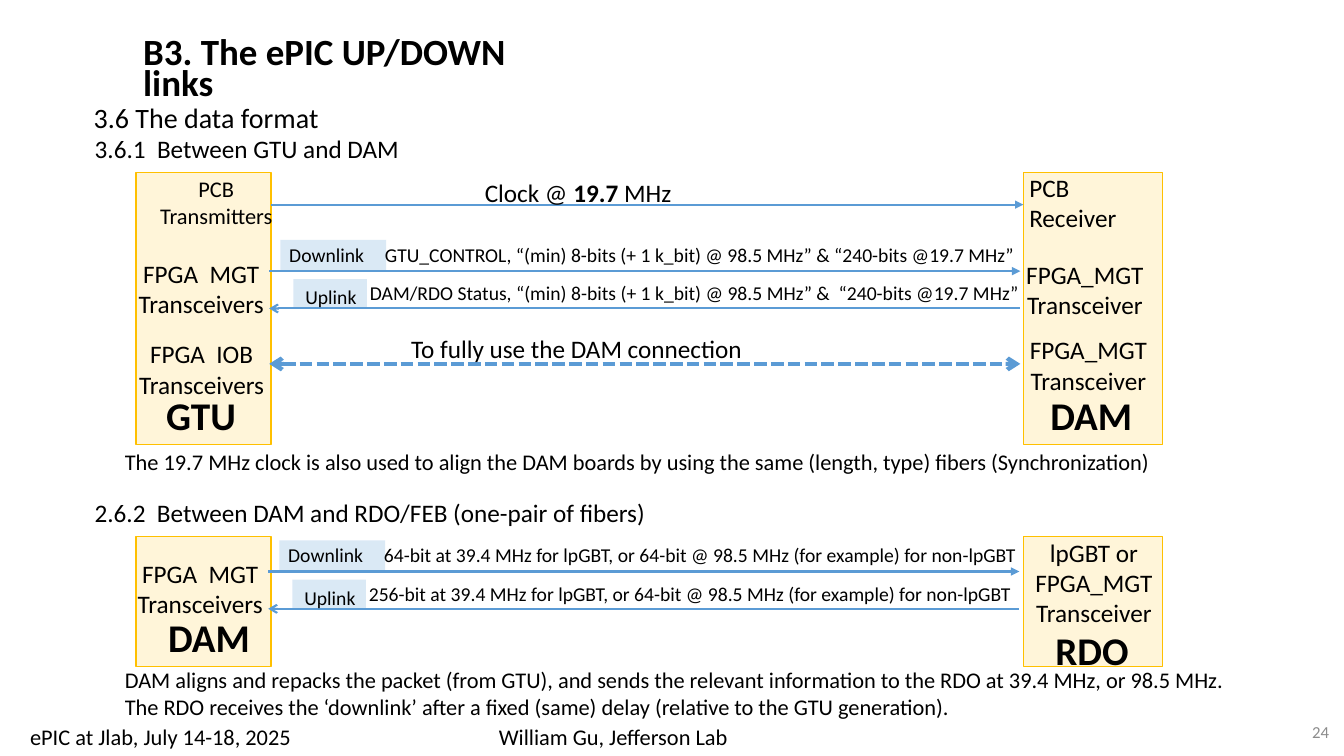
"""Build the slide on the ePIC up and down links."""
from pptx import Presentation
from pptx.dml.color import RGBColor
from pptx.enum.dml import MSO_LINE
from pptx.enum.shapes import MSO_CONNECTOR, MSO_SHAPE
from pptx.enum.text import MSO_ANCHOR, MSO_AUTO_SIZE, PP_ALIGN
from pptx.oxml.ns import qn
from pptx.util import Inches, Pt
from lxml import etree

LEFT, MID, RIGHT = PP_ALIGN.LEFT, PP_ALIGN.CENTER, PP_ALIGN.RIGHT
TOP, CENTER = MSO_ANCHOR.TOP, MSO_ANCHOR.MIDDLE
GROW, FIXED = MSO_AUTO_SIZE.SHAPE_TO_FIT_TEXT, MSO_AUTO_SIZE.NONE
RECT, LINE = MSO_SHAPE.RECTANGLE, MSO_CONNECTOR.STRAIGHT
DOTS = MSO_LINE.SQUARE_DOT
HEX = {"ink": "000000", "blue": "5B9BD5", "gold": "FFC000", "gray": "8C8C8C"}
FONT = "Calibri"
COLS, ROWS = 133.3, 75
CELL = Inches(0.1)
NEAR, FAR = 13.5, 101.5
NEAR_W, FAR_W = 13.4, 13.8
SPAN = 74.5


def grid(*cells):
    """Turn grid cells into slide lengths."""
    return [round(n * CELL) for n in cells]


def tint(name):
    """Return a named colour."""
    return RGBColor.from_string(HEX[name])


def fill_text(frame, runs, size, align=LEFT, color="ink", after=None):
    """Write (text, bold) runs into the first paragraph of a frame."""
    par = frame.paragraphs[0]
    par.alignment = align
    if after:
        par.space_after = Pt(after)
    for words, bold in runs:
        run = par.add_run()
        run.text = words
        font = run.font
        font.name, font.size, font.bold = FONT, Pt(size), bold
        font.color.rgb = tint(color)
    return par


def label(slide, cells, words, size, align=LEFT, wrap=False, bold=False,
          after=None, color="ink", anchor=TOP):
    """Add a text box; words is a string or a list of runs."""
    frame = slide.shapes.add_textbox(*grid(*cells)).text_frame
    frame.word_wrap = wrap
    frame.auto_size = GROW
    frame.vertical_anchor = anchor
    runs = [(words, bold)] if isinstance(words, str) else words
    fill_text(frame, runs, size, align, color, after)


def block(slide, cells, color, alpha, edge=False):
    """Add a see-through rectangle, with a line if edge is set."""
    shape = slide.shapes.add_shape(RECT, *grid(*cells))
    shape.shadow.inherit = False
    shape.fill.solid()
    shape.fill.fore_color.rgb = tint(color)
    hue = shape.fill._xPr.find(".//" + qn("a:srgbClr"))
    etree.SubElement(hue, qn("a:alpha"), val=str(alpha * 1000))
    if edge:
        shape.line.color.rgb = tint(color)
        shape.line.width = Pt(1)
    else:
        shape.line.fill.background()


def arrow(slide, x, y, span, head=None, tail=None, width=1.5, dash=None):
    """Add a level line with heads at its start and end."""
    line = slide.shapes.add_connector(LINE, *grid(x, y, x + span, y))
    line.line.color.rgb = tint("blue")
    line.line.width = Pt(width)
    if dash:
        line.line.dash_style = dash
    stroke = line.line._get_or_add_ln()
    for tag, kind in (("a:headEnd", head), ("a:tailEnd", tail)):
        if kind:
            etree.SubElement(stroke, qn(tag), type=kind)
    etree.SubElement(line._element.spPr, qn("a:effectLst"))


def links(slide, x, y, down, up):
    """Add a downlink and an uplink, each with its tag and data."""
    block(slide, (x + 1.1, y - 3.1, 10.5, 3.1), "blue", 22)
    block(slide, (x + 2.4, y + 0.8, 7.3, 2.9), "blue", 22)
    arrow(slide, x, y, SPAN, tail="triangle")
    arrow(slide, x, y + 3.7, SPAN, head="arrow")
    label(slide, (x + 1, y - 3.3, 9.5, 3.4), "Downlink", 14)
    label(slide, (x + 2.6, y + 0.9, 7.2, 3.4), "Uplink", 14)
    label(slide, (x + 10.5, y - 3.3, down[1], 3.4), down[0], 14)
    label(slide, (x + 9, y + 0.5, up[1], 3.4), up[0], 14)


def boards(slide, y, tall):
    """Add the boards at both ends of the links."""
    block(slide, (NEAR, y, NEAR_W, tall), "gold", 15, True)
    block(slide, (FAR, y, FAR_W, tall), "gold", 15, True)


def heading(slide):
    """Fill the title and add the section heads."""
    title = slide.shapes.title
    title.left, title.top, title.width, title.height = grid(13.2, 3.5, 44.2, 5.3)
    frame = title.text_frame
    frame.word_wrap, frame.auto_size = True, FIXED
    frame.vertical_anchor = TOP
    par = fill_text(frame, [("B3. The ePIC UP/DOWN links", True)], 26.4)
    par.line_spacing = 0.7
    for cells, words, size in (
            ((8.3, 9.5, 31.1, 4.4), "3.6 The data format", 20),
            ((8.4, 12.7, 37.8, 4), "3.6.1  Between GTU and DAM", 18),
            ((8.4, 48.8, 68, 4),
             "2.6.2  Between DAM and RDO/FEB (one-pair of fibers)", 18)):
        label(slide, cells, words, size, wrap=True, after=4)


def upper(slide):
    """Draw the links between GTU and DAM."""
    boards(slide, 17.1, 27)
    arrow(slide, NEAR + NEAR_W, 20.3, FAR - NEAR - NEAR_W, tail="triangle")
    label(slide, (47.1, 17.1, 20.7, 4),
          [("Clock @ ", False), ("19.7 ", True), ("MHz", False)], 18)
    links(slide, 26.7, 26.9,
          ("GTU_CONTROL, “(min) 8-bits (+ 1 k_bit) @ 98.5 MHz”"
           " & “240-bits @19.7 MHz”", 65),
          ("DAM/RDO Status, “(min) 8-bits (+ 1 k_bit) @ 98.5 MHz”"
           " &  “240-bits @19.7 MHz”", 66.9))
    arrow(slide, 26.7, 36.1, SPAN, "arrow", "arrow", 3, DOTS)
    label(slide, (39.8, 32.6, 36.6, 4), "To fully use the DAM connection", 18)


def parts(slide):
    """Name the boards and the parts on them."""
    for cells, words, size, align in (
            ((13.9, 16.9, 15.1, 6.4), "PCB Transmitters", 16, MID),
            ((11.5, 25.1, 16.9, 7.1), "FPGA  MGT Transceivers", 18, MID),
            ((12.7, 33.1, 14.6, 7.1), "FPGA  IOB Transceivers", 18, MID),
            ((101.1, 16.6, 13.2, 7.1), "PCB Receiver", 18, LEFT),
            ((100.1, 25.2, 15, 7.1), "FPGA_MGT Transceiver", 18, MID),
            ((100.7, 32.7, 14.5, 7.1), "FPGA_MGT Transceiver", 18, MID),
            ((11.4, 54.9, 16.9, 7.1), "FPGA  MGT Transceivers", 18, MID),
            ((101, 52.8, 15, 10.1), "lpGBT or FPGA_MGT Transceiver", 18, MID)):
        label(slide, cells, words, size, align, True)
    for x, y, wide, name in ((15.5, 38.3, 9, "GTU"), (103.2, 38.3, 10.2, "DAM"),
                             (15.7, 60.4, 10.2, "DAM"), (103.7, 61.6, 9.3, "RDO")):
        label(slide, (x, y, wide, 5.7), name, 28, bold=True)


def lower(slide):
    """Draw the links between DAM and RDO."""
    boards(slide, 53.2, 12.9)
    links(slide, 26.6, 56.7,
          ("64-bit at 39.4 MHz for lpGBT, or 64-bit @ 98.5 MHz"
           " (for example) for non-lpGBT", 65.4),
          ("256-bit at 39.4 MHz for lpGBT, or 64-bit @ 98.5 MHz"
           " (for example) for non-lpGBT", 66.4))


def notes(slide):
    """Add the remarks and the foot of the slide."""
    label(slide, (11.4, 44, 104.2, 3.7),
          "The 19.7 MHz clock is also used to align the DAM boards by using "
          "the same (length, type) fibers (Synchronization)", 16)
    label(slide, (11.4, 65.6, 111.7, 6.4),
          "DAM aligns and repacks the packet (from GTU), and sends the relevant "
          "information to the RDO at 39.4 MHz, or 98.5 MHz. The RDO receives the "
          "‘downlink’ after a fixed (same) delay (relative to the GTU generation).",
          16, wrap=True)
    label(slide, (2, 71.3, 28.2, 3.7), "ePIC at Jlab, July 14-18, 2025", 16)
    label(slide, (48.5, 71.3, 25, 3.7), "William Gu, Jefferson Lab", 16)
    label(slide, (102.8, 70.6, 30, 4), "24", 12, RIGHT, True,
          color="gray", anchor=CENTER)


def main():
    """Build and save the deck."""
    deck = Presentation()
    deck.slide_width, deck.slide_height = grid(COLS, ROWS)
    slide = deck.slides.add_slide(deck.slide_layouts[5])
    heading(slide)
    upper(slide)
    lower(slide)
    parts(slide)
    notes(slide)
    deck.save("out.pptx")


if __name__ == "__main__":
    main()
